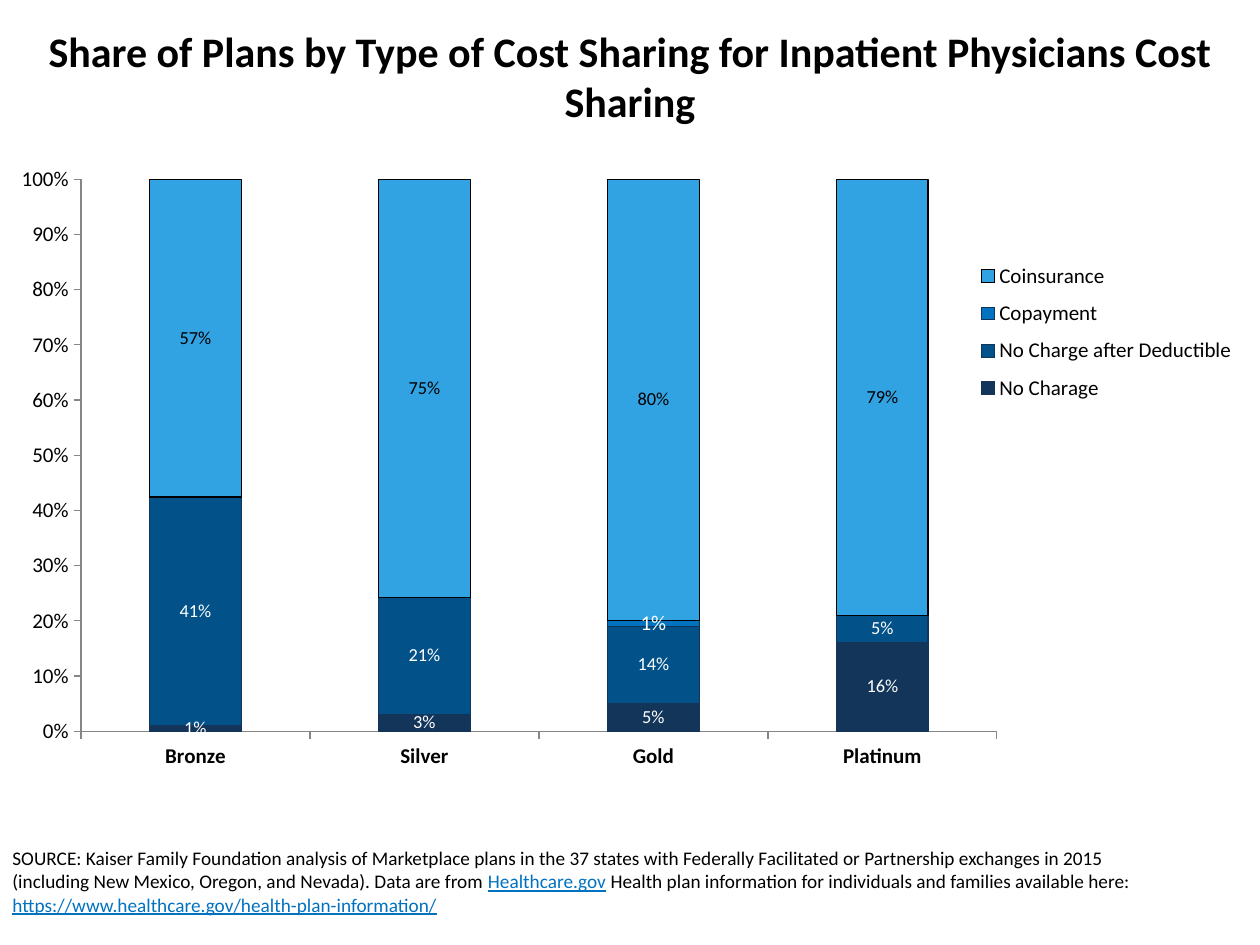
from lxml import etree
from pptx import Presentation
from pptx.chart.data import CategoryChartData
from pptx.dml.color import RGBColor
from pptx.enum.chart import XL_CHART_TYPE as ChartType, XL_LABEL_POSITION as LabelPosition
from pptx.enum.chart import XL_LEGEND_POSITION as LegendPosition, XL_TICK_MARK as TickMark
from pptx.enum.text import MSO_ANCHOR as Anchor, PP_ALIGN as Align
from pptx.oxml.ns import qn
from pptx.util import Inches, Pt

COLORS = {
    "text": "000000", "white": "FFFFFF", "axis": "868686", "link": "0072C0",
    "navy": "133559", "deep": "025189", "blue": "0072C0", "sky": "31A3E3",
}
TIERS = ["Bronze", "Silver", "Gold", "Platinum"]
# name, values, fill, line, label colour, label size, label format
SERIES = [
    ("No Charage", (0.01, 0.03, 0.05, 0.16), "navy", "navy", "white", 10.5, "0%"),
    ("No Charge after Deductible", (0.41, 0.21, 0.14, 0.05), "deep", "navy", "white", 10.5, "0%"),
    ("Copayment", (0, 0, 0.01, 0), "blue", "navy", "white", 12, "0%;;"),  # zeros stay unlabelled
    ("Coinsurance", (0.57, 0.75, 0.8, 0.79), "sky", "text", "text", 10.5, "0%"),
]
SOURCE_RUNS = [
    ("SOURCE: Kaiser Family Foundation analysis of Marketplace plans in the 37 states with "
     "Federally Facilitated or Partnership exchanges in 2015 (including New Mexico, Oregon, "
     "and Nevada). Data are from ", False),
    ("Healthcare.gov", True),
    (" Health plan information for individuals and families available here: ", False),
    ("https://www.healthcare.gov/health-plan-information/", True),
]


class SlideBuilder:
    font_name = "Calibri"

    def __init__(self, slide):
        self.slide = slide

    def color(self, name):
        return RGBColor.from_string(COLORS[name])

    def style_font(self, font, size, color="text", bold=False):
        font.name = self.font_name
        font.size = Pt(size)
        font.bold = bold
        font.color.rgb = self.color(color)

    def title(self, text, left, top, width, height):
        shape = self.slide.shapes.title
        shape.left, shape.top = Inches(left), Inches(top)
        shape.width, shape.height = Inches(width), Inches(height)
        frame = shape.text_frame
        frame.word_wrap = True
        frame.vertical_anchor = Anchor.MIDDLE
        paragraph = frame.paragraphs[0]
        paragraph.alignment = Align.CENTER
        run = paragraph.add_run()
        run.text = text
        self.style_font(run.font, 24, bold=True)

    def text(self, runs, left, top, width, height):
        shape = self.slide.shapes.add_textbox(
            Inches(left), Inches(top), Inches(width), Inches(height))
        shape.text_frame.word_wrap = True
        paragraph = shape.text_frame.paragraphs[0]
        for text, is_link in runs:
            run = paragraph.add_run()
            run.text = text
            self.style_font(run.font, 11, "link" if is_link else "text")
            run.font.underline = is_link

    def place(self, element, position, x, y, width, height, inner=False):
        """Give a chart part a fixed place, in fractions of the chart."""
        for old in element.findall(qn("c:layout")):
            element.remove(old)
        layout = etree.Element(qn("c:layout"))
        manual = etree.SubElement(layout, qn("c:manualLayout"))
        settings = [("layoutTarget", "inner")] if inner else []
        settings += [("xMode", "edge"), ("yMode", "edge"),
                     ("x", x), ("y", y), ("w", width), ("h", height)]
        for tag, value in settings:
            etree.SubElement(manual, qn(f"c:{tag}")).set("val", str(value))
        element.insert(position, layout)

    def stacked_chart(self, categories, series_rows, left, top, width, height):
        data = CategoryChartData(number_format="0%")
        data.categories = categories
        for name, values, *_ in series_rows:
            data.add_series(name, values)
        chart = self.slide.shapes.add_chart(
            ChartType.COLUMN_STACKED_100, Inches(left), Inches(top),
            Inches(width), Inches(height), data).chart
        self.style_font(chart.font, 12)
        chart.has_title = False

        # Columns and their labels
        plot = chart.plots[0]
        plot.gap_width, plot.overlap = 150, 100
        plot.vary_by_categories = False
        for series, row in zip(plot.series, series_rows):
            _, _, fill, line, label_color, label_size, label_format = row
            series.format.fill.solid()
            series.format.fill.fore_color.rgb = self.color(fill)
            series.format.line.color.rgb = self.color(line)
            series.format.line.width = Pt(0.75)
            labels = series.data_labels
            labels.show_value = True
            labels.number_format = label_format
            labels.number_format_is_linked = False
            labels.position = LabelPosition.CENTER
            self.style_font(labels.font, label_size, label_color)

        # Axes
        for axis, bold in ((chart.category_axis, True), (chart.value_axis, False)):
            axis.has_major_gridlines = False
            axis.major_tick_mark = TickMark.OUTSIDE
            axis.minor_tick_mark = TickMark.NONE
            axis.format.line.color.rgb = self.color("axis")
            axis.format.line.width = Pt(0.75)
            self.style_font(axis.tick_labels.font, 12, bold=bold)
        value_axis = chart.value_axis
        value_axis.minimum_scale, value_axis.maximum_scale = 0, 1
        value_axis.major_unit = 0.1
        value_axis.tick_labels.number_format = "0%"
        value_axis.tick_labels.number_format_is_linked = False

        # Legend and fixed layout
        chart.has_legend = True
        legend = chart.legend
        legend.position = LegendPosition.RIGHT
        legend.include_in_layout = False
        self.style_font(legend.font, 12)
        plot_area = chart.element.find(f".//{qn('c:plotArea')}")
        legend_element = chart.element.find(f".//{qn('c:legend')}")
        self.place(plot_area, 0, 0.062, 0.035, 0.735, 0.885, inner=True)
        self.place(legend_element, 1, 0.77, 0.15, 0.23, 0.26)


def main():
    presentation = Presentation()
    presentation.slide_width, presentation.slide_height = Inches(10), Inches(7.5)
    title_only = presentation.slide_layouts[5]
    builder = SlideBuilder(presentation.slides.add_slide(title_only))

    # Source note, title and chart
    builder.text(SOURCE_RUNS, 0, 6.67, 9.25, 0.84)
    builder.title("Share of Plans by Type of Cost Sharing for Inpatient Physicians Cost Sharing",
                  0.1, 0.1, 9.8, 1)
    builder.stacked_chart(TIERS, SERIES, 0.03, 1.25, 9.89, 4.95)
    presentation.save("out.pptx")


if __name__ == "__main__":
    main()
